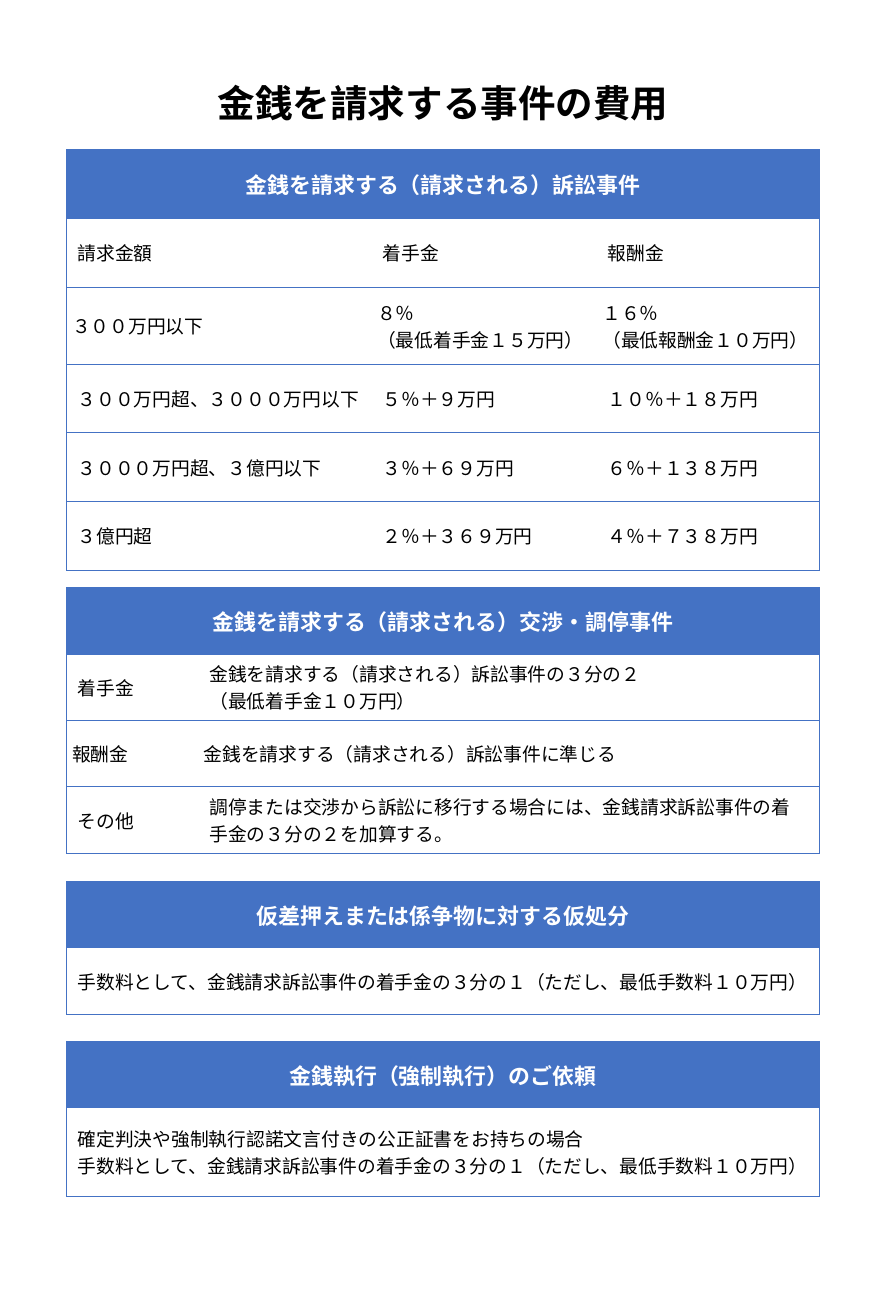
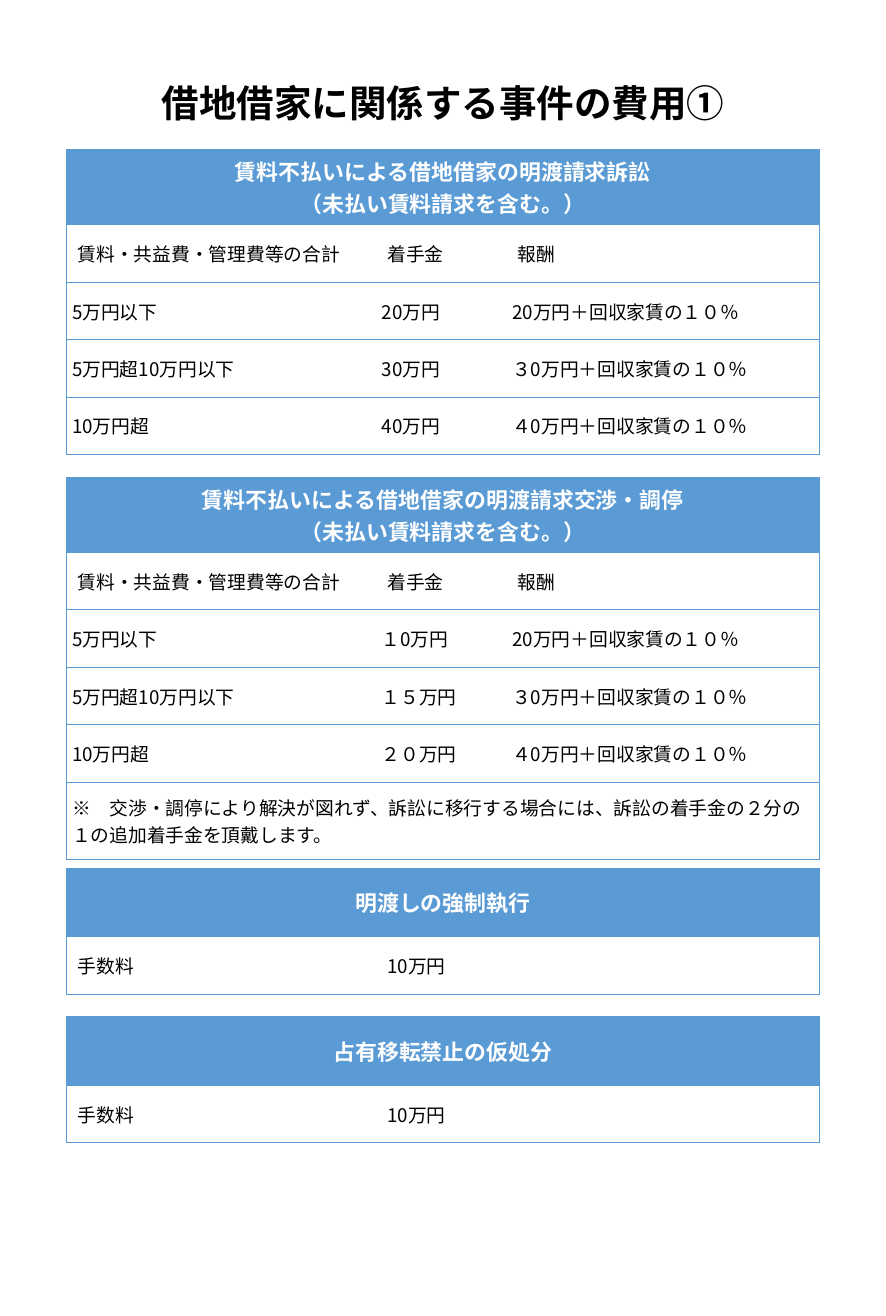
from collections import namedtuple

from lxml.etree import SubElement
from pptx import Presentation
from pptx.dml.color import RGBColor
from pptx.enum.text import MSO_ANCHOR, MSO_AUTO_SIZE, PP_ALIGN
from pptx.oxml.ns import qn
from pptx.util import Inches, Pt

FONT = "Noto Sans CJK JP"
COLORS = {"money": "4472C4", "lease": "5B9BD5", "text": "000000", "white": "FFFFFF"}
LEFT, WIDTH = 0.59, 6.69
ROOMY, TIGHT = (0.1, 0.05), (0.05, 0.1)  # horizontal and vertical cell margins

Row = namedtuple("Row", "cells height margins", defaults=[ROOMY])
# widths lists every column but the last, which takes the rest
FeeTable = namedtuple("FeeTable", "top widths banner banner_height rows height", defaults=[None])

LEASE_WIDTHS = [2.75, 1.16]
LEASE_HEADINGS = Row(["賃料・共益費・管理費等の合計", "着手金", "報酬"], 0.51)
LEASE_RENTS = ["5万円以下", "5万円超10万円以下", "10万円超"]
LEASE_REWARDS = [f"{amount}万円＋回収家賃の１０％" for amount in ("20", "３0", "４0")]
LEASE_NOTE = "※　交渉・調停により解決が図れず、訴訟に移行する場合には、訴訟の着手金の２分の１の追加着手金を頂戴します。"
MONEY_CHARGE = "手数料として、金銭請求訴訟事件の着手金の３分の１（ただし、最低手数料１０万円）"


def lease_rows(retainers):
    return [LEASE_HEADINGS] + [
        Row(cells, 0.51, TIGHT) for cells in zip(LEASE_RENTS, retainers, LEASE_REWARDS)
    ]


SLIDES = [
    ("金銭を請求する事件の費用", "money", [
        FeeTable(1.33, [2.71, 2], "金銭を請求する（請求される）訴訟事件", 0.61, [
            Row(["請求金額", "着手金", "報酬金"], 0.61),
            Row(["３００万円以下", "８％\n（最低着手金１５万円）", "１６％\n（最低報酬金１０万円）"], 0.61, TIGHT),
            Row(["３００万円超、３０００万円以下", "５％＋９万円", "１０％＋１８万円"], 0.61),
            Row(["３０００万円超、３億円以下", "３％＋６９万円", "６％＋１３８万円"], 0.61),
            Row(["３億円超", "２％＋３６９万円", "４％＋７３８万円"], 0.61),
        ]),
        FeeTable(5.22, [1.17], "金銭を請求する（請求される）交渉・調停事件", 0.59, [
            Row(["着手金", "金銭を請求する（請求される）訴訟事件の３分の２\n（最低着手金１０万円）"], 0.59),
            Row(["報酬金", "金銭を請求する（請求される）訴訟事件に準じる"], 0.59, TIGHT),
            Row(["その他", "調停または交渉から訴訟に移行する場合には、金銭請求訴訟事件の着手金の３分の２を加算する。"], 0.59),
        ]),
        FeeTable(7.83, [], "仮差押えまたは係争物に対する仮処分", 0.59, [Row([MONEY_CHARGE], 0.59)]),
        FeeTable(9.25, [], "金銭執行（強制執行）のご依頼", 0.59, [
            Row(["確定判決や強制執行認諾文言付きの公正証書をお持ちの場合\n" + MONEY_CHARGE], 0.79),
        ]),
    ]),
    ("借地借家に関係する事件の費用①", "lease", [
        FeeTable(1.33, LEASE_WIDTHS, "賃料不払いによる借地借家の明渡請求訴訟\n（未払い賃料請求を含む。）", 0.61,
                 lease_rows(["20万円", "30万円", "40万円"])),
        FeeTable(4.24, LEASE_WIDTHS, "賃料不払いによる借地借家の明渡請求交渉・調停\n（未払い賃料請求を含む。）", 0.61,
                 lease_rows(["１0万円", "１５万円", "２０万円"]) + [Row([LEASE_NOTE], 0.51, TIGHT)], 3.26),
    ] + [
        FeeTable(top, LEASE_WIDTHS[:1], banner, 0.61, [Row(["手数料", "10万円"], 0.51)])
        for top, banner in [(7.71, "明渡しの強制執行"), (9.03, "占有移転禁止の仮処分")]
    ]),
]


def style_text(text_frame, size, color, bold, alignment):
    for paragraph in text_frame.paragraphs:
        paragraph.alignment = alignment
        font = paragraph.font
        font.size, font.bold, font.name = Pt(size), bold, FONT
        font.color.rgb = RGBColor.from_string(COLORS[color])
        SubElement(font._element, qn("a:ea"), typeface=FONT)


def set_borders(cell, color, is_first, is_last):
    """Rule the cell above and below, and at the outer sides of the table."""
    properties = cell._tc.get_or_add_tcPr()
    for side, visible in (("L", is_first), ("R", is_last), ("T", True), ("B", True)):
        line = SubElement(properties, qn(f"a:ln{side}"), w=str(Pt(0.5)))
        if visible:
            fill = SubElement(line, qn("a:solidFill"))
            SubElement(fill, qn("a:srgbClr"), val=COLORS[color])
        else:
            SubElement(line, qn("a:noFill"))


def add_title(slide, text):
    title = slide.shapes.title
    title.left, title.top, title.width, title.height = map(Inches, (LEFT, 0.66, WIDTH, 0.5))
    frame = title.text_frame
    frame.text = text
    frame.word_wrap = True
    frame.auto_size = MSO_AUTO_SIZE.NONE
    frame.vertical_anchor = MSO_ANCHOR.MIDDLE
    style_text(frame, 24, "text", True, PP_ALIGN.CENTER)


def add_fee_table(slide, fee_table, color):
    rows = [Row([fee_table.banner], fee_table.banner_height)] + fee_table.rows
    widths = fee_table.widths + [WIDTH - sum(fee_table.widths)]
    height = fee_table.height or sum(row.height for row in rows)
    shape = slide.shapes.add_table(len(rows), len(widths), Inches(LEFT), Inches(fee_table.top),
                                   Inches(WIDTH), Inches(height))
    table = shape.table
    for column, width in zip(table.columns, widths):
        column.width = Inches(width)
    last = len(widths) - 1
    for row_index, row in enumerate(rows):
        table.rows[row_index].height = Inches(row.height)
        is_banner = row_index == 0
        is_merged = len(row.cells) <= last
        if is_merged:
            table.cell(row_index, 0).merge(table.cell(row_index, last))
        for column_index in range(last + 1):
            cell = table.cell(row_index, column_index)
            set_borders(cell, color, column_index == 0, is_merged or column_index == last)
            if is_banner:
                cell.fill.solid()
                cell.fill.fore_color.rgb = RGBColor.from_string(COLORS[color])
            else:
                cell.fill.background()
            if cell.is_spanned:
                continue
            cell.text = row.cells[column_index]
            cell.vertical_anchor = MSO_ANCHOR.MIDDLE
            cell.margin_left = cell.margin_right = Inches(row.margins[0])
            cell.margin_top = cell.margin_bottom = Inches(row.margins[1])
            if is_banner:
                style_text(cell.text_frame, 14, "white", True, PP_ALIGN.CENTER)
            else:
                style_text(cell.text_frame, 12, "text", False, PP_ALIGN.LEFT)
    shape.height = Inches(height)


def main():
    presentation = Presentation()
    presentation.slide_width, presentation.slide_height = Inches(7.87), Inches(11.69)
    for title, color, fee_tables in SLIDES:
        slide = presentation.slides.add_slide(presentation.slide_layouts[5])
        add_title(slide, title)
        for fee_table in fee_tables:
            add_fee_table(slide, fee_table, color)
    presentation.save("out.pptx")


if __name__ == "__main__":
    main()
